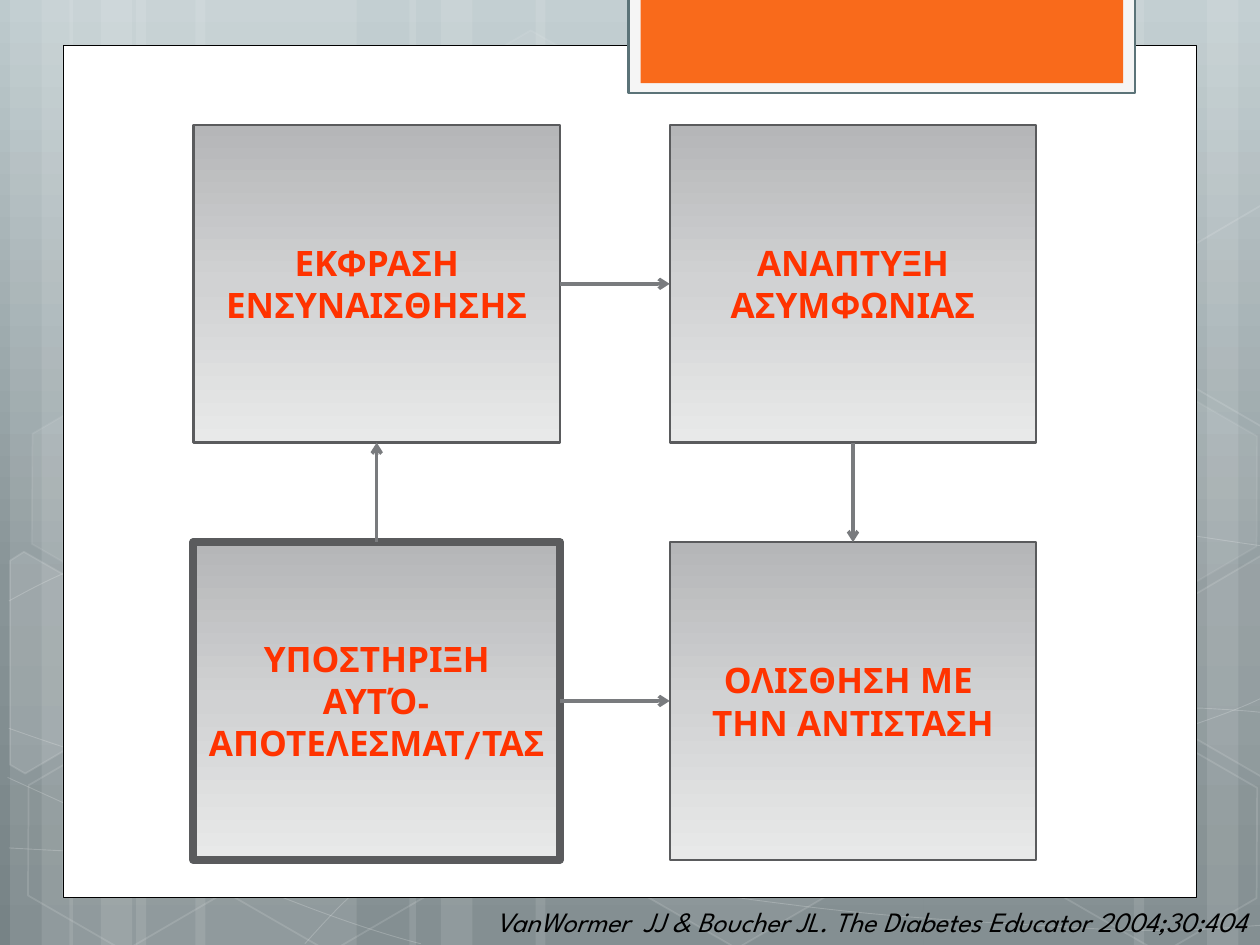
from itertools import product
from typing import NamedTuple

from lxml.etree import SubElement
from pptx import Presentation
from pptx.dml.color import RGBColor
from pptx.enum.shapes import MSO_CONNECTOR as Connector, MSO_SHAPE as Preset
from pptx.enum.text import MSO_ANCHOR as Anchor, MSO_AUTO_SIZE as AutoSize, PP_ALIGN as Align
from pptx.oxml.ns import qn
from pptx.util import Inches, Pt

COLUMNS, ROWS = 100, 75
SLIDE_WIDTH, SLIDE_HEIGHT = Inches(10), Inches(7.5)
COLUMN, ROW = SLIDE_WIDTH / COLUMNS, SLIDE_HEIGHT / ROWS
FONT = "League Spartan"

WHITE = RGBColor(0xFF, 0xFF, 0xFF)
BLACK = RGBColor(0x00, 0x00, 0x00)
SKY = RGBColor(0xBD, 0xCA, 0xCD)
SLATE = RGBColor(0x88, 0x94, 0x97)
STEEL = RGBColor(0x77, 0x83, 0x86)
PALE = RGBColor(0xF5, 0xF5, 0xF5)
TAB_EDGE = RGBColor(0x5B, 0x73, 0x78)
ORANGE = RGBColor(0xF9, 0x6A, 0x1B)
CARD_TOP = RGBColor(0xB5, 0xB6, 0xB8)
CARD_MIDDLE = RGBColor(0xD1, 0xD2, 0xD3)
CARD_BOTTOM = RGBColor(0xE8, 0xE9, 0xE9)
CARD_EDGE = RGBColor(0x5A, 0x5B, 0x5D)
ARROW = RGBColor(0x79, 0x7B, 0x7E)
RED = RGBColor(0xFF, 0x33, 0x00)

BANDS = [(10.8, 17.5), (0.8, 5), (3.3, 8.3), (15.5, 17.5), (5.5, 5), (8, 8.3),
         (73.3, 17.5), (95.8, 5), (90, 8.3), (42.5, 30.8), (32.5, 5), (35, 8.3)]
CURVES = [
    [(0.7, 67.3), (6.1, 67.6), (11.5, 67.9), (19, 67.8), (26.5, 67.7), (35.8, 67.5),
     (45.8, 66.5), (55.8, 65.5), (70, 63.6), (79.2, 61.7), (88.3, 59.8), (97.7, 56.8),
     (100.7, 55.1)],
    [(0.7, 47.7), (3.6, 46.1), (6.5, 44.6), (12.1, 43.1), (17.8, 41.6), (25.9, 39.4),
     (34.7, 38.7), (43.6, 38), (54.4, 37.9), (65.4, 38.7), (76.4, 39.5), (94.7, 42.6),
     (100.7, 43.4)],
    [(0.6, 61.7), (12.7, 67.2), (24.7, 72.7), (33.4, 74.9)],
    [(0.7, 57.8), (3.8, 58.9), (7, 60), (12.8, 61.6), (18.6, 63.1), (27.3, 65.6),
     (35.7, 67.3), (44, 69), (54.5, 70.8), (62.8, 71.8), (71.1, 72.9), (80, 73.3),
     (85.3, 73.6), (90.5, 74), (91.9, 73.8), (94.5, 73.8), (97.1, 73.7), (98.9, 73.5),
     (100.7, 73.4)],
    [(24.2, 74.9), (26, 72.9), (27.8, 70.9), (30.2, 69.1), (32.6, 67.3), (36, 65.3),
     (38.8, 63.9), (41.6, 62.5), (43.3, 61.9), (47, 60.9), (50.6, 59.9), (57.3, 58.5),
     (60.8, 57.8), (64.4, 57.1), (64.9, 57.1), (68, 56.9), (71.1, 56.6), (76, 56.3),
     (79.4, 56.2), (82.9, 56.1), (88.6, 56.2), (88.6, 56.2), (90.8, 56.2), (93.1, 56.2),
     (95.3, 56.2), (97.1, 56.3), (98.8, 56.4), (99.7, 56.5), (100.6, 56.6), (100.3, 56.5),
     (100.6, 56.6)],
]
HEXAGONS = [(33.4, 3.6, 4, 8), (49.7, 58.9, 6, 12), (1.1, 59.1, 0, 12), (1.4, 31.2, 7, 8),
            (17.4, 59.2, 0, 12), (75.3, 45.3, 10, 12), (83.4, 59.3, 0, 12), (83.4, 31.4, 7, 8)]
CUT_HEXAGONS = [
    ([(0.8, 44.5), (1.9, 43.8), (9.6, 48.2), (9.5, 57), (2, 61.4), (0.8, 60.7)], 10),
    ([(92.6, 48.5), (100.1, 44.1), (100.9, 44.6), (100.9, 61.3), (100.2, 61.7),
      (92.6, 57.3)], 4),
    ([(92.6, 20.7), (100.1, 16.3), (101, 16.8), (100.9, 33.5), (100.2, 33.9),
      (92.6, 29.5)], 0),
]
CARDS = [("ΕΚΦΡΑΣΗ ΕΝΣΥΝΑΙΣΘΗΣΗΣ", 1.25), ("ΑΝΑΠΤΥΞΗ ΑΣΥΜΦΩΝΙΑΣ", 1.25),
         ("ΥΠΟΣΤΗΡΙΞΗ ΑΥΤΌ-ΑΠΟΤΕΛΕΣΜΑΤ/ΤΑΣ", 4.5), ("ΟΛΙΣΘΗΣΗ ΜΕ \nΤΗΝ ΑΝΤΙΣΤΑΣΗ", 1.25)]
TOP, LEFT, BOTTOM, RIGHT = range(4)
LINKS = [(0, RIGHT, 1, LEFT), (1, BOTTOM, 3, TOP), (2, RIGHT, 3, LEFT), (2, TOP, 0, BOTTOM)]


class Box(NamedTuple):
    left: float
    top: float
    width: float
    height: float

    def inner(self, left, top, width, height):
        return Box(self.left + left, self.top + top, width, height)

    def emu(self):
        return (round(self.left * COLUMN), round(self.top * ROW),
                round(self.width * COLUMN), round(self.height * ROW))


def set_gradient(fill, element, stops):
    fill.gradient()
    fill.gradient_angle = 270
    stop_list = element.xpath(".//a:gsLst")[0]
    for stop in list(stop_list):
        stop_list.remove(stop)
    for position, color in stops:
        stop = SubElement(stop_list, qn("a:gs"), pos=str(position * 1000))
        SubElement(stop, qn("a:srgbClr"), val=str(color))


def set_opacity(shape, location, percent):
    if percent < 100:
        color = shape.element.xpath(f"./p:spPr/{location}a:solidFill/a:srgbClr")[0]
        SubElement(color, qn("a:alpha"), val=str(percent * 1000))


def style(shape, fill=None, opacity=100, edge=None, weight=1, edge_opacity=100):
    shape.shadow.inherit = False
    if fill is None or opacity == 0:
        shape.fill.background()
    else:
        shape.fill.solid()
        shape.fill.fore_color.rgb = fill
        set_opacity(shape, "", opacity)
    if edge is None:
        shape.line.fill.background()
    else:
        shape.line.color.rgb = edge
        shape.line.width = Pt(weight)
        set_opacity(shape, "a:ln/", edge_opacity)
    return shape


def add_preset(page, box, preset=Preset.RECTANGLE, **look):
    return style(page.shapes.add_shape(preset, *box.emu()), **look)


def add_outline(page, box, points, close, **look):
    spots = [(round((box.left + x) * COLUMN), round((box.top + y) * ROW)) for x, y in points]
    builder = page.shapes.build_freeform(*spots[0])
    builder.add_line_segments(spots[1:], close=close)
    return style(builder.convert_to_shape(), **look)


def bend(shape):
    route = shape.element.xpath(".//a:path")[0]
    lines = route.xpath("./a:lnTo")
    for start in range(0, len(lines), 3):
        curve = SubElement(route, qn("a:cubicBezTo"))
        for line in lines[start:start + 3]:
            curve.append(line[0])
            route.remove(line)


def write(shape, text, size, color, align, bold=False, italic=False):
    frame = shape.text_frame
    frame.word_wrap = True
    for index, line in enumerate(text.split("\n")):
        para = frame.add_paragraph() if index else frame.paragraphs[0]
        para.alignment = align
        span = para.add_run()
        span.text = line
        font = span.font
        font.name, font.size, font.bold, font.italic = FONT, Pt(size), bold, italic
        font.color.rgb = color


def draw_backdrop(page, box):
    set_gradient(page.background.fill, page.element, [(0, SKY), (62, SLATE), (100, STEEL)])
    for left, width in BANDS:
        add_preset(page, box.inner(left, 0, width, box.height), fill=WHITE, opacity=10)
    for points in CURVES:
        bend(add_outline(page, box, points, False, edge=WHITE, weight=0.5, edge_opacity=20))
    for left, top, opacity, edge_opacity in HEXAGONS:
        hexagon = add_preset(page, box.inner(left, top, 17.5, 15.2), Preset.HEXAGON, fill=WHITE,
                             opacity=opacity, edge=WHITE, edge_opacity=edge_opacity)
        hexagon.adjustments[0] = 0.285
        hexagon.rotation = 30
    for points, opacity in CUT_HEXAGONS:
        add_outline(page, box, points, True, fill=WHITE, opacity=opacity,
                    edge=WHITE, edge_opacity=12)


def draw_panel(page, box):
    add_preset(page, box, fill=WHITE, edge=BLACK, weight=0.5)
    add_preset(page, box.inner(44.88, -3.8, 40.2, 7.6), fill=PALE, edge=TAB_EDGE, weight=1.25)
    add_preset(page, box.inner(45.85, -3.8, 38.3, 6.8), fill=ORANGE)


def draw_cycle(page, box, gap_x=8.7, gap_y=7.9):
    width, height = (box.width - gap_x) / 2, (box.height - gap_y) / 2
    cards = []
    for (row, column), (text, weight) in zip(product(range(2), repeat=2), CARDS):
        place = box.inner(column * (width + gap_x), row * (height + gap_y), width, height)
        card = add_preset(page, place, edge=CARD_EDGE, weight=weight)
        set_gradient(card.fill, card.element,
                     [(0, CARD_TOP), (50, CARD_MIDDLE), (100, CARD_BOTTOM)])
        card.text_frame.vertical_anchor = Anchor.MIDDLE
        write(card, text, 20, RED, Align.CENTER, bold=True)
        cards.append(card)
    for source, exit_side, target, entry_side in LINKS:
        arrow = page.shapes.add_connector(Connector.STRAIGHT, 0, 0, 0, 0)
        arrow.begin_connect(cards[source], exit_side)
        arrow.end_connect(cards[target], entry_side)
        arrow.line.color.rgb = ARROW
        arrow.line.width = Pt(2)
        SubElement(arrow.element.xpath("./p:spPr/a:ln")[0], qn("a:tailEnd"), type="arrow")
        SubElement(arrow.element.spPr, qn("a:effectLst"))


def draw_citation(page, box):
    citation = page.shapes.add_textbox(*box.emu())
    write(citation, "VanWormer  JJ & Boucher JL. The Diabetes Educator 2004;30:404",
          16, BLACK, Align.RIGHT, italic=True)
    citation.text_frame.auto_size = AutoSize.SHAPE_TO_FIT_TEXT


def main():
    deck = Presentation()
    deck.slide_width, deck.slide_height = SLIDE_WIDTH, SLIDE_HEIGHT
    page = deck.slides.add_slide(deck.slide_layouts[6])
    draw_backdrop(page, Box(0, 0, COLUMNS, ROWS))
    draw_panel(page, Box(5, 3.6, 90, 67.65))
    draw_cycle(page, Box(15.35, 9.93, 66.9, 58.3))
    draw_citation(page, Box(15.4, 71.3, 84.6, 3.7))
    deck.save("out.pptx")


if __name__ == "__main__":
    main()
